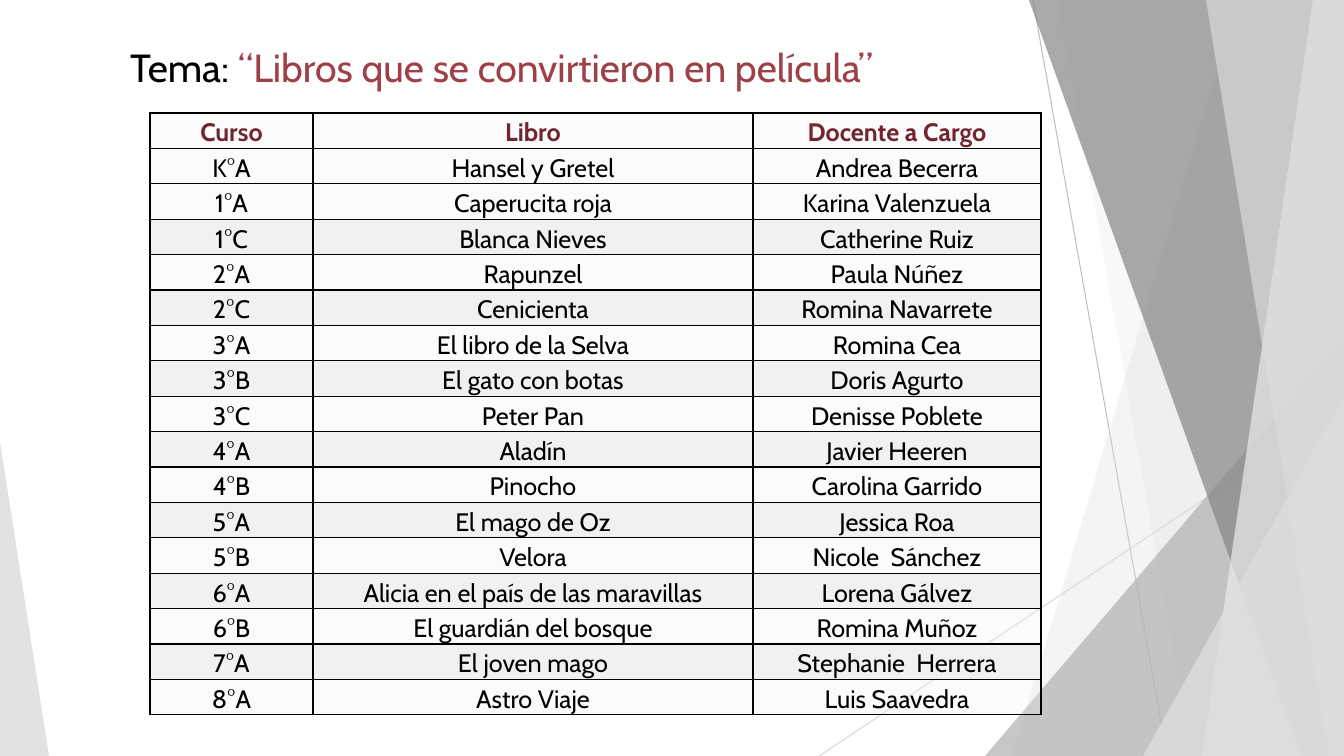
from dataclasses import dataclass

from lxml.etree import SubElement
from pptx import Presentation
from pptx.dml.color import RGBColor
from pptx.dml.fill import FillFormat
from pptx.enum.shapes import MSO_CONNECTOR, MSO_SHAPE
from pptx.enum.text import MSO_ANCHOR, MSO_AUTO_SIZE, PP_ALIGN
from pptx.oxml.ns import qn
from pptx.slide import Slide
from pptx.table import _Cell
from pptx.util import Emu, Pt

WIDTH, HEIGHT = 1344, 756
SCALE = 12192000 / WIDTH
FONT = "Cabin"


@dataclass
class Ray:
    start: tuple[int, int]
    end: tuple[int, int]
    color: str


@dataclass
class Band:
    top_x: int
    bottom_x: int
    color: str
    alpha: int


@dataclass
class Wedge:
    left: int
    top: int
    width: int
    apex: int
    color: str
    alpha: int


@dataclass
class Row:
    curso: str
    libro: str
    docente: str
    shaded: bool = False


DECOR = [
    Ray((1033, 0), (1167, HEIGHT), "BFBFBF"),
    Ray((WIDTH, 406), (819, HEIGHT), "D9D9D9"),
    Band(1238, 1012, "DDDDDD", 30),
    Band(1058, 1192, "DDDDDD", 20),
    Wedge(985, 336, 359, 1, "B2B2B2", 72),
    Band(1029, 1301, "858585", 70),
    Band(1313, 1202, "EBEBEB", 70),
    Band(1206, 1329, "DDDDDD", 65),
    Wedge(1143, 396, 201, 1, "DDDDDD", 80),
    Wedge(0, 442, 49, 0, "DDDDDD", 85),
]

ROWS = [
    Row("Curso", "Libro", "Docente a Cargo"),
    Row("K°A", "Hansel y Gretel", "Andrea Becerra"),
    Row("1°A", "Caperucita roja", "Karina Valenzuela"),
    Row("1°C", "Blanca Nieves", "Catherine Ruiz", True),
    Row("2°A", "Rapunzel", "Paula Núñez"),
    Row("2°C", "Cenicienta", "Romina Navarrete", True),
    Row("3°A", "El libro de la Selva", "Romina Cea"),
    Row("3°B", "El gato con botas", "Doris Agurto", True),
    Row("3°C", "Peter Pan", "Denisse Poblete"),
    Row("4°A", "Aladín", "Javier Heeren", True),
    Row("4°B", "Pinocho", "Carolina Garrido"),
    Row("5°A", "El mago de Oz", "Jessica Roa", True),
    Row("5°B", "Velora", "Nicole  Sánchez"),
    Row("6°A", "Alicia en el país de las maravillas", "Lorena Gálvez", True),
    Row("6°B", "El guardián del bosque", "Romina Muñoz"),
    Row("7°A", "El joven mago", "Stephanie  Herrera", True),
    Row("8°A", "Astro Viaje", "Luis Saavedra"),
]
COLUMNS = [163, 440, 288]
TABLE_LEFT, TABLE_TOP, TABLE_HEIGHT = 150, 113, 602


def px(*values: int) -> list[Emu]:
    return [Emu(round(v * SCALE)) for v in values]


def rgb(color: str) -> RGBColor:
    return RGBColor.from_string(color)


def apply(target: object, values: dict) -> None:
    for name, value in values.items():
        setattr(target, name, value)


def set_fill(fill: FillFormat, color: str, alpha: int = 100) -> None:
    fill.solid()
    fill.fore_color.rgb = rgb(color)
    if alpha < 100:
        clr = fill._xPr.find(qn("a:solidFill"))[0]
        SubElement(clr, qn("a:alpha")).set("val", str(alpha * 1000))


def add_run(p, text: str, size: int, color: str, bold: bool = False) -> None:
    r = p.add_run()
    r.text = text
    apply(r.font, {"name": FONT, "size": Pt(size), "bold": bold})
    r.font.color.rgb = rgb(color)


def draw_ray(s: Slide, ray: Ray) -> None:
    ln = s.shapes.add_connector(MSO_CONNECTOR.STRAIGHT, *px(*ray.start, *ray.end))
    ln.line.color.rgb = rgb(ray.color)
    ln.line.width = Pt(0.75)
    SubElement(ln._element.spPr, qn("a:effectLst"))


def draw_area(s: Slide, area: Band | Wedge) -> None:
    if isinstance(area, Band):
        fb = s.shapes.build_freeform(area.top_x, 0, scale=SCALE)
        fb.add_line_segments([(WIDTH, 0), (WIDTH, HEIGHT), (area.bottom_x, HEIGHT)])
        sp = fb.convert_to_shape()
    else:
        box = px(area.left, area.top, area.width, HEIGHT - area.top)
        sp = s.shapes.add_shape(MSO_SHAPE.ISOSCELES_TRIANGLE, *box)
        sp.adjustments[0] = area.apex
    sp.shadow.inherit = False
    sp.line.fill.background()
    set_fill(sp.fill, area.color, area.alpha)


def add_borders(cell: _Cell) -> None:
    tcPr = cell._tc.get_or_add_tcPr()
    for side in ("lnL", "lnR", "lnT", "lnB"):
        ln = SubElement(tcPr, qn(f"a:{side}"))
        ln.set("w", str(Pt(1)))
        fill = SubElement(ln, qn("a:solidFill"))
        SubElement(fill, qn("a:srgbClr")).set("val", "000000")


def draw_table(s: Slide) -> None:
    box = px(TABLE_LEFT, TABLE_TOP, sum(COLUMNS), TABLE_HEIGHT)
    table = s.shapes.add_table(len(ROWS), len(COLUMNS), *box).table
    apply(table, {"first_row": False, "horz_banding": False})
    for column, width in zip(table.columns, px(*COLUMNS)):
        column.width = width
    side, = px(7)
    margins = {"margin_left": side, "margin_right": side,
               "margin_top": 0, "margin_bottom": 0}
    for i, row in enumerate(ROWS):
        color = "000000" if i else "72242F"
        for j, text in enumerate((row.curso, row.libro, row.docente)):
            cell = table.cell(i, j)
            apply(cell, margins)
            add_borders(cell)
            set_fill(cell.fill, "F1F1F1", 100 if row.shaded else 27)
            p = cell.text_frame.paragraphs[0]
            apply(p, {"alignment": PP_ALIGN.CENTER, "line_spacing": 1.15})
            add_run(p, text, 18, color, i == 0)


def draw_title(s: Slide) -> None:
    sp = s.shapes.title
    apply(sp, dict(zip(("left", "top", "width", "height"), px(120, 38, 936, 57))))
    tf = sp.text_frame
    apply(tf, {"word_wrap": True, "vertical_anchor": MSO_ANCHOR.TOP,
               "auto_size": MSO_AUTO_SIZE.SHAPE_TO_FIT_TEXT})
    p = tf.paragraphs[0]
    p.alignment = PP_ALIGN.LEFT
    add_run(p, "Tema: ", 28, "000000")
    add_run(p, "“Libros que se convirtieron en película”", 28, "9E4047")


def main() -> None:
    prs = Presentation()
    prs.slide_width, prs.slide_height = px(WIDTH, HEIGHT)
    s = prs.slides.add_slide(prs.slide_layouts[5])
    for item in DECOR:
        if isinstance(item, Ray):
            draw_ray(s, item)
        else:
            draw_area(s, item)
    draw_table(s)
    draw_title(s)
    prs.save("out.pptx")


if __name__ == "__main__":
    main()
